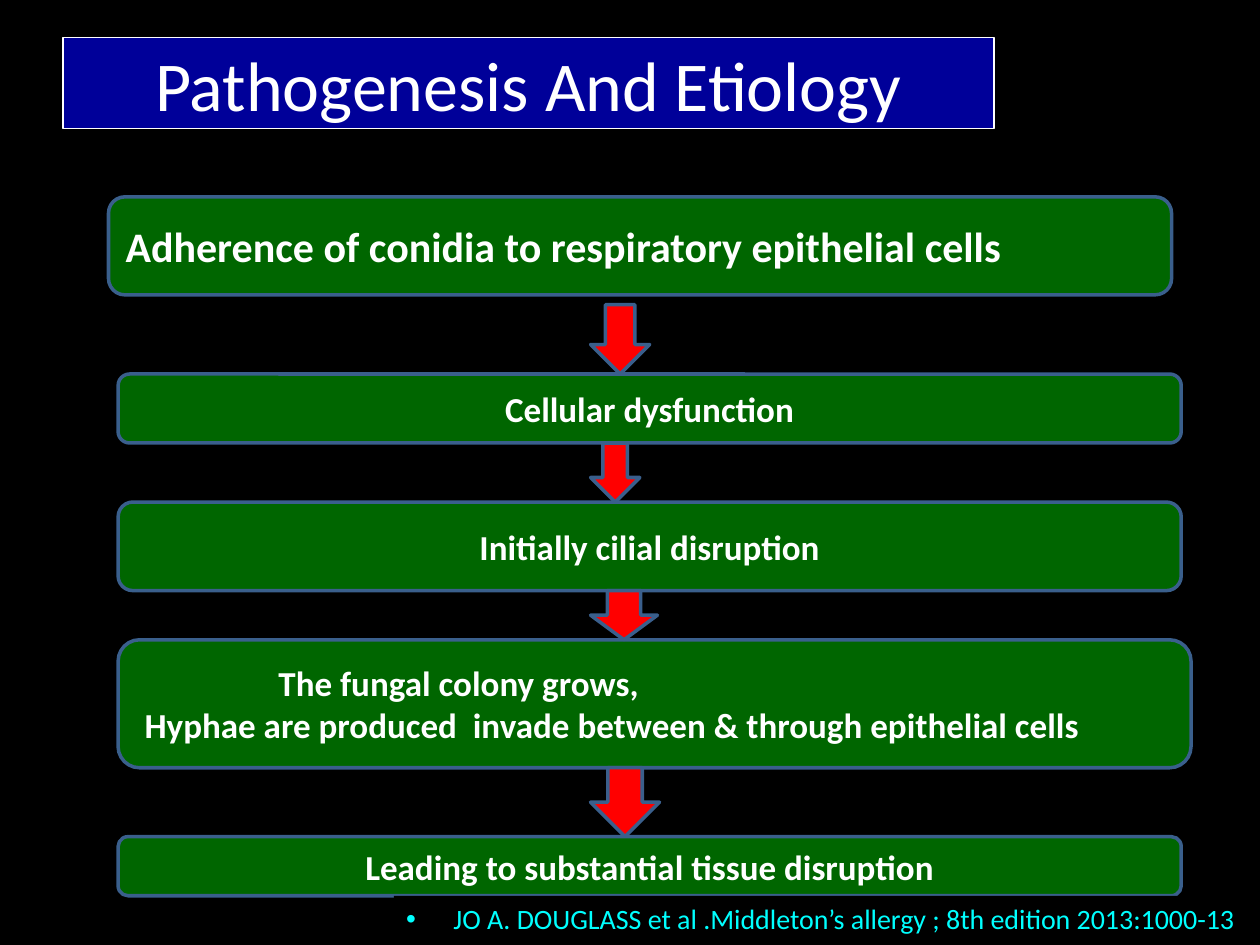
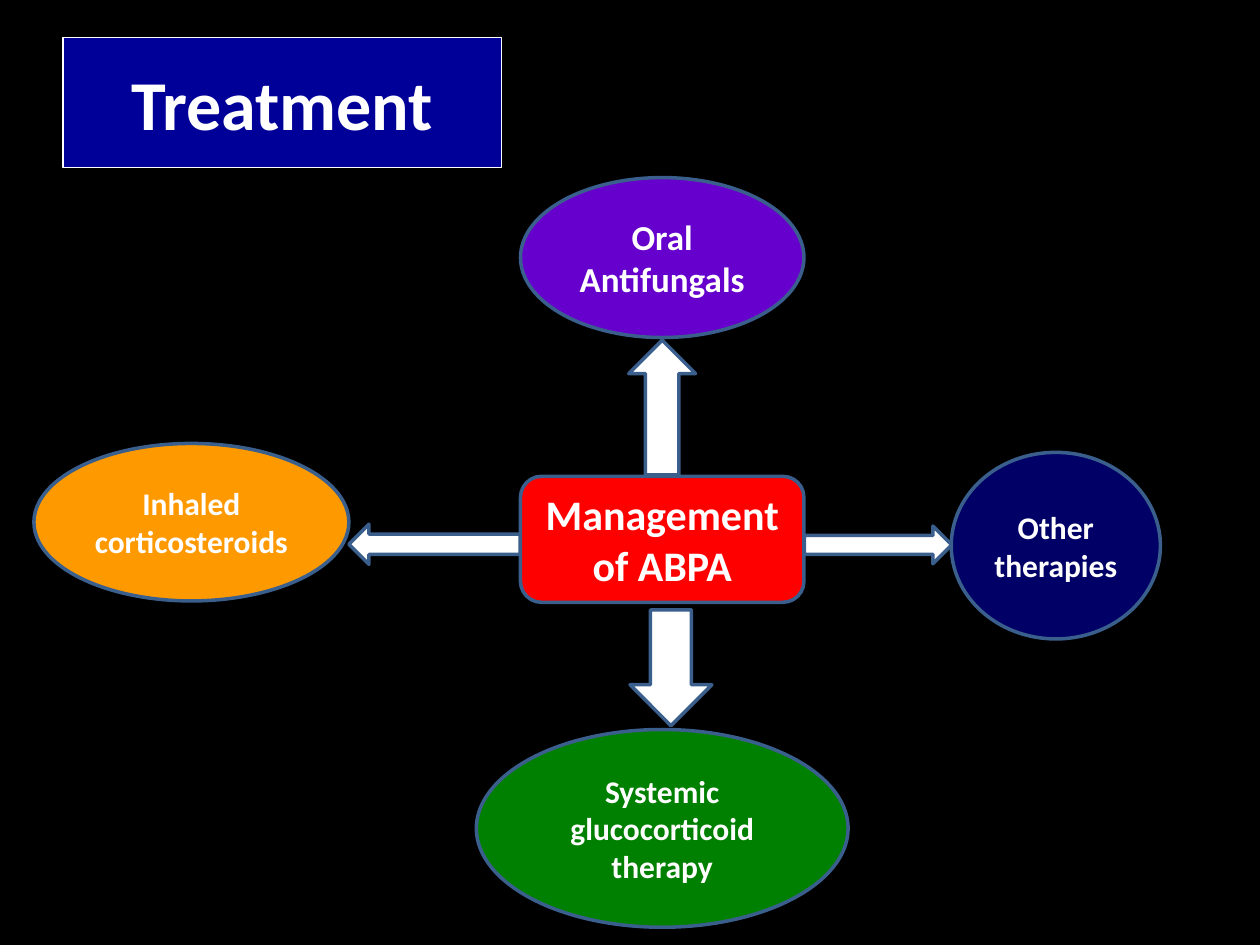
from dataclasses import dataclass

from lxml.etree import SubElement
from pptx import Presentation
from pptx.dml.color import RGBColor
from pptx.enum.shapes import MSO_SHAPE
from pptx.enum.text import MSO_ANCHOR, PP_ALIGN
from pptx.oxml.ns import qn
from pptx.util import Pt


@dataclass(frozen=True)
class Theme:
    font: str = "Calibri"
    back: str = "000000"
    text: str = "FFFFFF"
    title: str = "000099"
    edge: str = "3A5F8C"
    step: str = "006600"
    alert: str = "FF0000"
    cite: str = "00FFFF"
    oral: str = "6600CC"
    inhaled: str = "FF9900"
    systemic: str = "008000"
    other: str = "000066"
    head_size: int = 40
    lead_size: int = 24
    body_size: int = 20
    node_size: int = 18
    cite_size: int = 16
    edge_width: float = 2
    title_width: float = 0.75


def color(code):
    return RGBColor.from_string(code)


class Deck:
    def __init__(self, theme):
        self.theme = theme
        self.file = Presentation()
        self.file.slide_width, self.file.slide_height = Pt(720), Pt(540)
        self.slide = None

    def page(self):
        self.slide = self.file.slides.add_slide(self.file.slide_layouts[6])
        fill = self.slide.background.fill
        fill.solid()
        fill.fore_color.rgb = color(self.theme.back)

    def shape(self, kind, area, fill, edge=None, width=None):
        """Add a filled shape; area is left, top, width, height in points."""
        item = self.slide.shapes.add_shape(kind, *map(Pt, area))
        item.shadow.inherit = False
        item.fill.solid()
        item.fill.fore_color.rgb = color(fill)
        item.line.color.rgb = color(edge or self.theme.edge)
        item.line.width = Pt(width or self.theme.edge_width)
        return item

    def label(self, item, text, size, bold=True, align=PP_ALIGN.CENTER, tint=None):
        frame = item.text_frame
        frame.word_wrap = True
        frame.vertical_anchor = MSO_ANCHOR.MIDDLE
        frame.text = text
        for para in frame.paragraphs:
            para.alignment = align
            font = para.font
            font.name, font.size, font.bold = self.theme.font, Pt(size), bold
            font.color.rgb = color(tint or self.theme.text)
        return frame

    def title(self, text, width, height, bold):
        look = self.theme
        item = self.shape(MSO_SHAPE.RECTANGLE, (36, 21.6, width, height),
                          look.title, look.text, look.title_width)
        self.label(item, text, look.head_size, bold)

    def box(self, text, area, fill, size, align=PP_ALIGN.CENTER):
        item = self.shape(MSO_SHAPE.ROUNDED_RECTANGLE, area, fill)
        return self.label(item, text, size, align=align)

    def oval(self, text, area, fill, size):
        self.label(self.shape(MSO_SHAPE.OVAL, area, fill), text, size)

    def arrow(self, kind, area, fill):
        self.shape(kind, area, fill)

    def cite(self, text, area):
        look = self.theme
        item = self.shape(MSO_SHAPE.RECTANGLE, area, look.back)
        item.line.fill.background()
        frame = self.label(item, text, look.cite_size, False,
                           PP_ALIGN.LEFT, look.cite)
        frame.vertical_anchor = MSO_ANCHOR.TOP
        props = indent(frame.paragraphs[0], 27, -27)
        SubElement(props, qn("a:buFont")).set("typeface", "Arial")
        SubElement(props, qn("a:buChar")).set("char", "•")
        # The schema wants the default font after the bullet.
        props.append(props.find(qn("a:defRPr")))


def indent(para, left, first=0):
    props = para._p.get_or_add_pPr()
    props.set("marL", str(Pt(left)))
    props.set("indent", str(Pt(first)))
    return props


def causes(deck):
    look = deck.theme
    deck.page()
    deck.title("Pathogenesis And Etiology", 532, 52, False)
    left, wide = 67.5, 607.5
    steps = [
        ("Adherence of conidia to respiratory epithelial cells",
         (62, 112.5, wide, 56), look.lead_size, PP_ALIGN.LEFT),
        ("Cellular dysfunction",
         (left, 213.75, wide, 39.4), look.body_size, PP_ALIGN.CENTER),
        ("Initially cilial disruption",
         (left, 286.9, wide, 50.6), look.body_size, PP_ALIGN.CENTER),
        ("The fungal colony grows,\n"
         "Hyphae are produced  invade between & through epithelial cells",
         (left, 365.6, 613.1, 73.1), look.body_size, PP_ALIGN.LEFT),
        ("Leading to substantial tissue disruption",
         (left, 478.1, wide, 33.75), look.body_size, PP_ALIGN.CENTER),
    ]
    frames = [deck.box(text, area, look.step, size, align)
              for text, area, size, align in steps]
    for para, gap in zip(frames[3].paragraphs, (81, 4.5)):
        indent(para, gap)

    widths, gaps = (33.75, 28.1, 38.2, 39.4), (5.6, 0, 0, 0)
    for above, below, width, gap in zip(steps, steps[1:], widths, gaps):
        top = above[1][1] + above[1][3] + gap
        area = (337.5, top, width, below[1][1] - top)
        deck.arrow(MSO_SHAPE.DOWN_ARROW, area, look.alert)
    deck.cite("JO A. DOUGLASS et al .Middleton’s allergy ; 8th edition 2013:1000-13",
              (225, 511.9, 495, 26.6))


def care(deck):
    look = deck.theme
    deck.page()
    deck.title("Treatment", 250.6, 74.2, True)
    deck.box("Management of ABPA", (297.4, 272.2, 162, 72),
             look.alert, look.lead_size)
    arrows = [
        (MSO_SHAPE.DOWN_ARROW, (360, 348.5, 46.8, 66.2)),
        (MSO_SHAPE.LEFT_ARROW, (199.4, 299.5, 97.9, 23)),
        (MSO_SHAPE.RIGHT_ARROW, (459.7, 300.6, 84.2, 21.6)),
        (MSO_SHAPE.UP_ARROW, (359.3, 194.4, 38.2, 77)),
    ]
    for kind, area in arrows:
        deck.arrow(kind, area, look.text)
    nodes = [
        ("Inhaled corticosteroids", (19.4, 253.4, 180, 90),
         look.inhaled, look.node_size),
        ("Systemic glucocorticoid therapy", (272.2, 416.9, 212.4, 113),
         look.systemic, look.node_size),
        ("Other therapies", (543.6, 258.5, 119.5, 106.6),
         look.other, look.node_size),
        ("Oral Antifungals", (297.4, 101.5, 162, 91.4),
         look.oral, look.body_size),
    ]
    for node in nodes:
        deck.oval(*node)


def main():
    deck = Deck(Theme())
    causes(deck)
    care(deck)
    deck.file.save("out.pptx")


if __name__ == "__main__":
    main()
